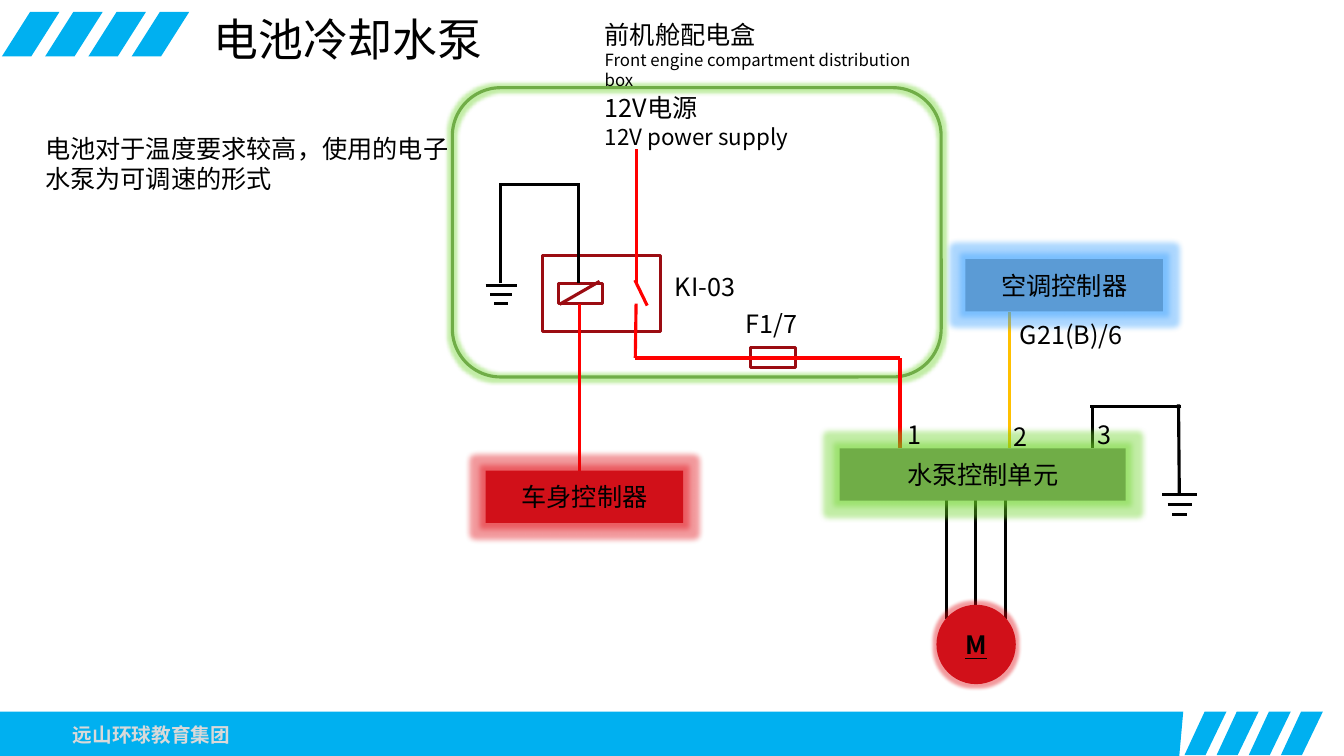
from lxml import etree
from pptx import Presentation
from pptx.dml.color import RGBColor
from pptx.enum.shapes import MSO_CONNECTOR, MSO_SHAPE
from pptx.enum.text import MSO_ANCHOR, PP_ALIGN
from pptx.oxml.ns import qn
from pptx.util import Cm, Pt

RECT, ROUND, OVAL = MSO_SHAPE.RECTANGLE, MSO_SHAPE.ROUNDED_RECTANGLE, MSO_SHAPE.OVAL
STRAIGHT = MSO_CONNECTOR.STRAIGHT
LEFT, CENTER = PP_ALIGN.LEFT, PP_ALIGN.CENTER
TOP, MIDDLE = MSO_ANCHOR.TOP, MSO_ANCHOR.MIDDLE

THEME = dict(
    font="Noto Sans CJK SC", line=2.25,
    title=32, body=18, sub=16, foot=14, small=12,
    sky="00B0F0", ink="000000", pale="D9D9D9", green="70AD47", blue="5B9BD5",
    red="D11019", dark="9B0C12", live="FF0000", gold="FFC000",
)

BAR = [(-0.3, 17.93), (29.82, 17.93), (29.72, 19.05), (-0.3, 19.05)]
STRIPES = [
    (0.05, 0.3, 1.09, [(0.71, 0), (0, 1.12), (0.74, 1.12), (1.45, 0)]),
    (29.85, 17.93, 0.81, [(0.51, 0), (0, 1.1), (0.53, 1.1), (1.06, 0)]),
]

FRAMES = [
    (ROUND, (11.4, 2.21, 12.32, 7.29), "green", 5),
    (RECT, (13.67, 6.43, 2.97, 1.93), "dark", 0),
    (RECT, (14.07, 7.14, 1.12, 0.51), "dark", 0),
    (RECT, (18.92, 8.76, 1.12, 0.51), "dark", 0),
]

WIRES = {
    "dark": [(14.1, 7.67, 15.11, 7.09)],
    "ink": [
        (14.58, 7.14, 14.58, 4.6), (12.62, 4.65, 14.58, 4.65),
        (12.62, 7.14, 12.62, 4.6), (29.72, 12.45, 29.7, 10.19),
        (27.53, 11.28, 27.53, 10.21), (29.77, 10.24, 27.48, 10.24),
    ],
    "live": [
        (14.6, 11.86, 14.6, 7.65), (16.03, 7.14, 16.03, 3.76),
        (16.01, 9.02, 16.03, 7.65), (16, 7.06, 16.31, 7.7),
        (16, 9.02, 22.68, 9.02), (22.68, 11.3, 22.68, 9.02),
    ],
    "gold": [(25.45, 11.3, 25.45, 7.85)],
}
GROUNDS = [(12.63, 7.19, 1), (29.73, 12.45, 1.13)]
HALVES = (0.39, 0.27, 0.17)
PHASES = 3

BLOCKS = [
    (RECT, (21.16, 11.3, 7.21, 1.32), "green", 8, "水泵控制单元", {}),
    (RECT, (24.33, 6.53, 4.98, 1.32), "blue", 8, "空调控制器", {}),
    (OVAL, (23.6, 15.24, 2, 2), "red", 5, "M", dict(bold=True, under=True)),
    (RECT, (12.24, 11.86, 4.98, 1.32), "red", 8, "车身控制器", {}),
]

LABELS = [
    ((1.42, 18.06, 4.8, 0.91), [("远山环球教育集团", "foot")],
     dict(color="pale", bold=True, align=CENTER, anchor=MIDDLE)),
    ((5.13, 0.18, 15.85, 1.63), [("电池冷却水泵", "title")], {}),
    ((14.99, 2.21, 5.69, 1.7),
     [("12V电源", "body"), ("12V power supply", "sub")], {}),
    ((18.54, 7.65, 2.06, 1.02), [("F1/7", "body")], {}),
    ((16.76, 6.71, 2.24, 1.02), [("KI-03", "body")], {}),
    ((14.99, 0.36, 8.86, 1.52),
     [("前机舱配电盒", "body"),
      ("Front engine compartment distribution box", "small")], {}),
    ((25.45, 7.92, 3.23, 1.02), [("G21(B)/6", "body")], {}),
    ((22.61, 10.44, 0.97, 1.02), [("1", "body")], {}),
    ((25.3, 10.49, 0.97, 1.02), [("2", "body")], {}),
    ((27.41, 10.44, 0.97, 1.02), [("3", "body")], {}),
    ((0.89, 3.23, 11.28, 1.8),
     [("电池对于温度要求较高，使用的电子水泵为可调速的形式", "body")], {}),
]


def tint(name):
    return RGBColor.from_string(THEME[name])


def write(frame, lines, color="ink", bold=False, under=False, align=LEFT, anchor=TOP):
    frame.word_wrap = True
    frame.vertical_anchor = anchor
    for i, (text, size) in enumerate(lines):
        para = frame.add_paragraph() if i else frame.paragraphs[0]
        para.alignment = align
        run = para.add_run()
        run.text = text
        font = run.font
        font.name = THEME["font"]
        font.size = Pt(THEME[size])
        font.bold, font.underline = bold, under
        font.color.rgb = tint(color)
        east = etree.Element(qn("a:ea"), typeface=THEME["font"])
        run._r.rPr.find(qn("a:latin")).addnext(east)


def glow(shape, name, size):
    effects = shape._element.spPr.find(qn("a:effectLst"))
    node = etree.SubElement(effects, qn("a:glow"), rad=str(Pt(size)))
    color = etree.SubElement(node, qn("a:srgbClr"), val=THEME[name])
    etree.SubElement(color, qn("a:satMod"), val="175000")
    etree.SubElement(color, qn("a:alpha"), val="40000")


def draw(shapes, kind, box, fill=None, edge=None, halo=0):
    shape = shapes.add_shape(kind, *map(Cm, box))
    shape.shadow.inherit = False
    if fill:
        shape.fill.solid()
        shape.fill.fore_color.rgb = tint(fill)
    else:
        shape.fill.background()
    if edge:
        shape.line.color.rgb = tint(edge)
        shape.line.width = Pt(THEME["line"])
    else:
        shape.line.fill.background()
    if halo:
        glow(shape, fill or edge, halo)
    return shape


def wire(shapes, ends, color):
    link = shapes.add_connector(STRAIGHT, *map(Cm, ends))
    link.line.color.rgb = tint(color)
    link.line.width = Pt(THEME["line"])
    etree.SubElement(link._element.spPr, qn("a:effectLst"))


def outline(shapes, points):
    spots = [(Cm(x), Cm(y)) for x, y in points]
    pen = shapes.build_freeform(*spots[0])
    pen.add_line_segments(spots[1:], close=True)
    shape = pen.convert_to_shape()
    shape.shadow.inherit = False
    shape.fill.solid()
    shape.fill.fore_color.rgb = tint("sky")
    shape.line.fill.background()


def main():
    deck = Presentation()
    deck.slide_width, deck.slide_height = Cm(33.87), Cm(19.05)
    shapes = deck.slides.add_slide(deck.slide_layouts[6]).shapes

    outline(shapes, BAR)
    for left, top, step, points in STRIPES:
        for i in range(4):
            outline(shapes, [(left + i * step + x, top + y) for x, y in points])

    for kind, box, edge, halo in FRAMES:
        draw(shapes, kind, box, edge=edge, halo=halo)

    for color, runs in WIRES.items():
        for ends in runs:
            wire(shapes, ends, color)
    for x, y, scale in GROUNDS:
        for i, half in enumerate(HALVES):
            level, reach = y + 0.23 * i * scale, half * scale
            wire(shapes, (x - reach, level, x + reach, level), "ink")
    for i in range(PHASES):
        x = 23.85 + 0.74 * i
        wire(shapes, (x, 12.6, x, 15.6), "ink")

    for kind, box, fill, halo, text, style in BLOCKS:
        block = draw(shapes, kind, box, fill=fill, halo=halo)
        write(block.text_frame, [(text, "body")], align=CENTER, anchor=MIDDLE, **style)

    for box, lines, style in LABELS:
        write(shapes.add_textbox(*map(Cm, box)).text_frame, lines, **style)

    deck.save("out.pptx")


if __name__ == "__main__":
    main()
